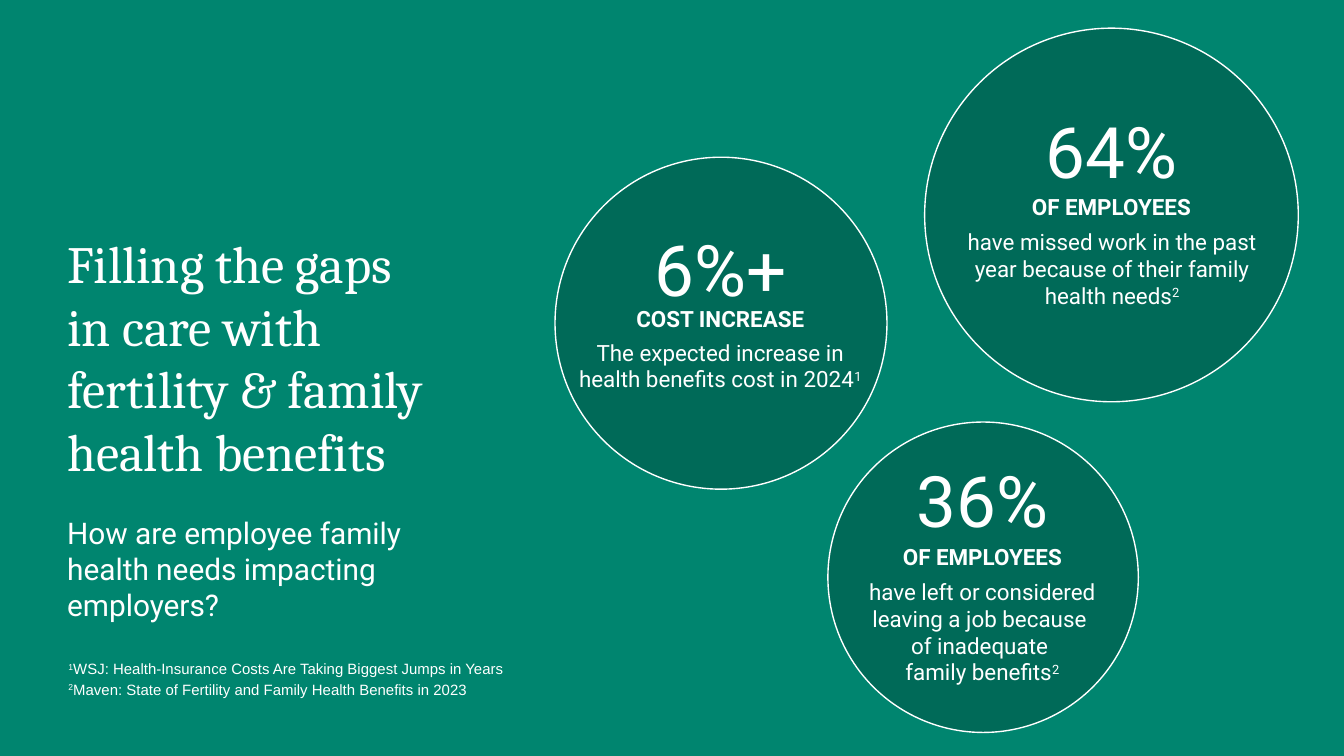
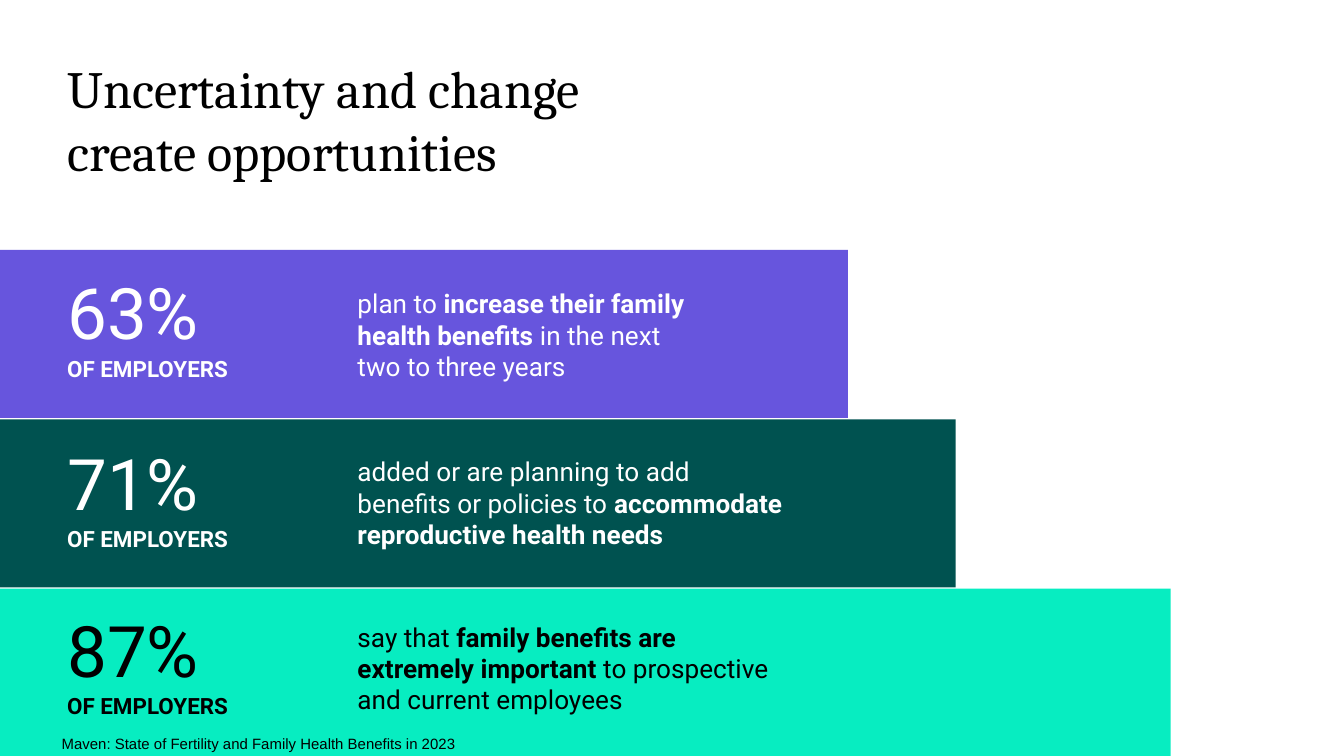
from lxml import etree
from pptx import Presentation
from pptx.dml.color import RGBColor
from pptx.enum.shapes import MSO_SHAPE
from pptx.enum.text import MSO_ANCHOR, MSO_AUTO_SIZE, PP_ALIGN
from pptx.oxml.ns import qn
from pptx.util import Pt

PX = 9144
LEFT, CENTER = PP_ALIGN.LEFT, PP_ALIGN.CENTER
TOP = MSO_ANCHOR.TOP
NO_FIT = MSO_AUTO_SIZE.NONE
ELLIPSE, RECTANGLE = MSO_SHAPE.OVAL, MSO_SHAPE.RECTANGLE

WHITE = RGBColor(0xFF, 0xFF, 0xFF)
BLACK = RGBColor(0x00, 0x00, 0x00)
GREEN = RGBColor(0x00, 0x85, 0x6F)
PURPLE = RGBColor(0x67, 0x55, 0xDD)
TEAL = RGBColor(0x00, 0x52, 0x50)
MINT = RGBColor(0x07, 0xED, 0xC1)

STYLES = {
    "title": ("Cambria", 28, False),
    "number": ("Roboto", 38, False),
    "label": ("Roboto", 12, True),
    "caption": ("Roboto", 12, None),
    "question": ("Roboto", 16, False),
    "finding": ("Roboto", 14, None),
    "source": ("Arial", 8, None),
}
LEFT_EDGE = 50
NUMBER_WIDTH, NUMBER_HEIGHT, LABEL_HEIGHT = 154, 64, 20


def write(box, area, style, color, paragraphs, align=LEFT):
    box.left, box.top, box.width, box.height = [length * PX for length in area]
    frame = box.text_frame
    frame.word_wrap = True
    frame.auto_size = NO_FIT
    frame.vertical_anchor = TOP
    margin = 10 * PX if style == "source" else 0
    frame.margin_left = frame.margin_top = margin
    frame.margin_right = frame.margin_bottom = margin
    name, size, bold = STYLES[style]
    for index, spans in enumerate(paragraphs):
        para = frame.add_paragraph() if index else frame.paragraphs[0]
        properties = para._p.get_or_add_pPr()
        properties.set("marL", "0")
        properties.set("indent", "0")
        etree.SubElement(properties, qn("a:buNone"))
        para.alignment = align
        para.space_before = Pt(0)
        para.line_spacing = 1.15 if style == "source" else 1.0
        para.font.name = name
        para.font.size = Pt(size)
        para.font.bold = bold
        para.font.color.rgb = color
        for text, mark in spans:
            for number, line in enumerate(text.split("\n")):
                if number:
                    para.add_line_break()
                span = para.add_run()
                span.text = line
                if mark == "bold":
                    span.font.bold = True
                if mark == "super":
                    span._r.get_or_add_rPr().set("baseline", "30000")


def add_panel(page, kind, area, color):
    panel = page.shapes.add_shape(kind, *[length * PX for length in area])
    panel.shadow.inherit = False
    panel.fill.solid()
    panel.fill.fore_color.rgb = color
    panel.line.fill.background()
    return panel


deck = Presentation()
deck.slide_width, deck.slide_height = 1000 * PX, 5143500

page = deck.slides.add_slide(deck.slide_layouts[1])
page.background.fill.solid()
page.background.fill.fore_color.rgb = GREEN
write(page.shapes.title, (LEFT_EDGE, 172, 371, 189), "title", WHITE, [
    [("Filling the gaps", "")],
    [("in care with", "")],
    [("fertility & family \nhealth benefits", "")],
])
write(page.placeholders[1], (LEFT_EDGE, 383, 308, 81), "question", WHITE,
      [[("How are employee family health needs impacting employers?", "")]])

circles = [
    (827, 21, 278, "64%", 80, "OF EMPLOYEES", 144, 231, 170, 61,
     "have missed work in the past year because of their family health needs", "2"),
    (536, 117, 247, "6%+", 168, "COST INCREASE", 227, 216, 252, 40,
     "The expected increase in health benefits cost in 2024", "1"),
    (731, 314, 231, "36%", 340, "OF EMPLOYEES", 404, 216, 430, 81,
     "have left or considered leaving a job because \nof inadequate \nfamily benefits", "2"),
]
for (middle, top, size, number, number_top, label, label_top,
     width, caption_top, caption_height, caption, note) in circles:
    circle = add_panel(page, ELLIPSE, (middle - size // 2, top, size, size), BLACK)
    shade = circle.fill._xPr.find(qn("a:solidFill"))[0]
    etree.SubElement(shade, qn("a:alpha")).set("val", "20000")
    circle.line.color.rgb = WHITE
    circle.line.width = Pt(0.75)
    number_left = middle - NUMBER_WIDTH // 2
    texts = [
        ((number_left, number_top, NUMBER_WIDTH, NUMBER_HEIGHT), "number", [(number, "")]),
        ((number_left, label_top, NUMBER_WIDTH, LABEL_HEIGHT), "label", [(label, "")]),
        ((middle - width // 2, caption_top, width, caption_height), "caption",
         [(caption, ""), (note, "super")]),
    ]
    for area, style, spans in texts:
        write(page.shapes.add_textbox(0, 0, 0, 0), area, style, WHITE, [spans], CENTER)

write(page.shapes.add_textbox(0, 0, 0, 0), (41, 479, 865, 75), "source", WHITE, [
    [("1", "super"), ("WSJ: Health-Insurance Costs Are Taking Biggest Jumps in Years", "")],
    [("2", "super"), ("Maven: State of Fertility and Family Health Benefits in 2023", "")],
])

page = deck.slides.add_slide(deck.slide_layouts[5])
page.background.fill.solid()
page.background.fill.fore_color.rgb = WHITE
write(page.shapes.title, (LEFT_EDGE, 42, 450, 94), "title", BLACK,
      [[("Uncertainty and change create opportunities", "")]])

bars = [
    (631, PURPLE, WHITE, "63%", 200, 214,
     [("plan to ", ""), ("increase their family \nhealth benefits", "bold"),
      (" in the next \ntwo to three years", "")]),
    (711, TEAL, WHITE, "71%", 327, 339,
     [("added or are planning to add \nbenefits or policies to ", ""),
      ("accommodate reproductive health needs", "bold")]),
    (871, MINT, BLACK, "87%", 451, 462,
     [("say that ", ""), ("family benefits are \nextremely important", "bold"),
      (" to prospective and current employees", "")]),
]
for index, (width, color, ink, number, number_top, finding_top, finding) in enumerate(bars):
    add_panel(page, RECTANGLE, (0, 186 + 126 * index, width, 125), color)
    texts = [
        ((LEFT_EDGE, number_top, NUMBER_WIDTH, NUMBER_HEIGHT), "number", [(number, "")]),
        ((LEFT_EDGE, number_top + NUMBER_HEIGHT, NUMBER_WIDTH, LABEL_HEIGHT), "label",
         [("OF EMPLOYERS", "")]),
        ((266, finding_top, 329, 71), "finding", finding),
    ]
    for area, style, spans in texts:
        write(page.shapes.add_textbox(0, 0, 0, 0), area, style, ink, [spans])

write(page.shapes.add_textbox(0, 0, 0, 0), (36, 535, 865, 34), "source", BLACK,
      [[("Maven: State of Fertility and Family Health Benefits in 2023", "")]])

deck.save("out.pptx")
